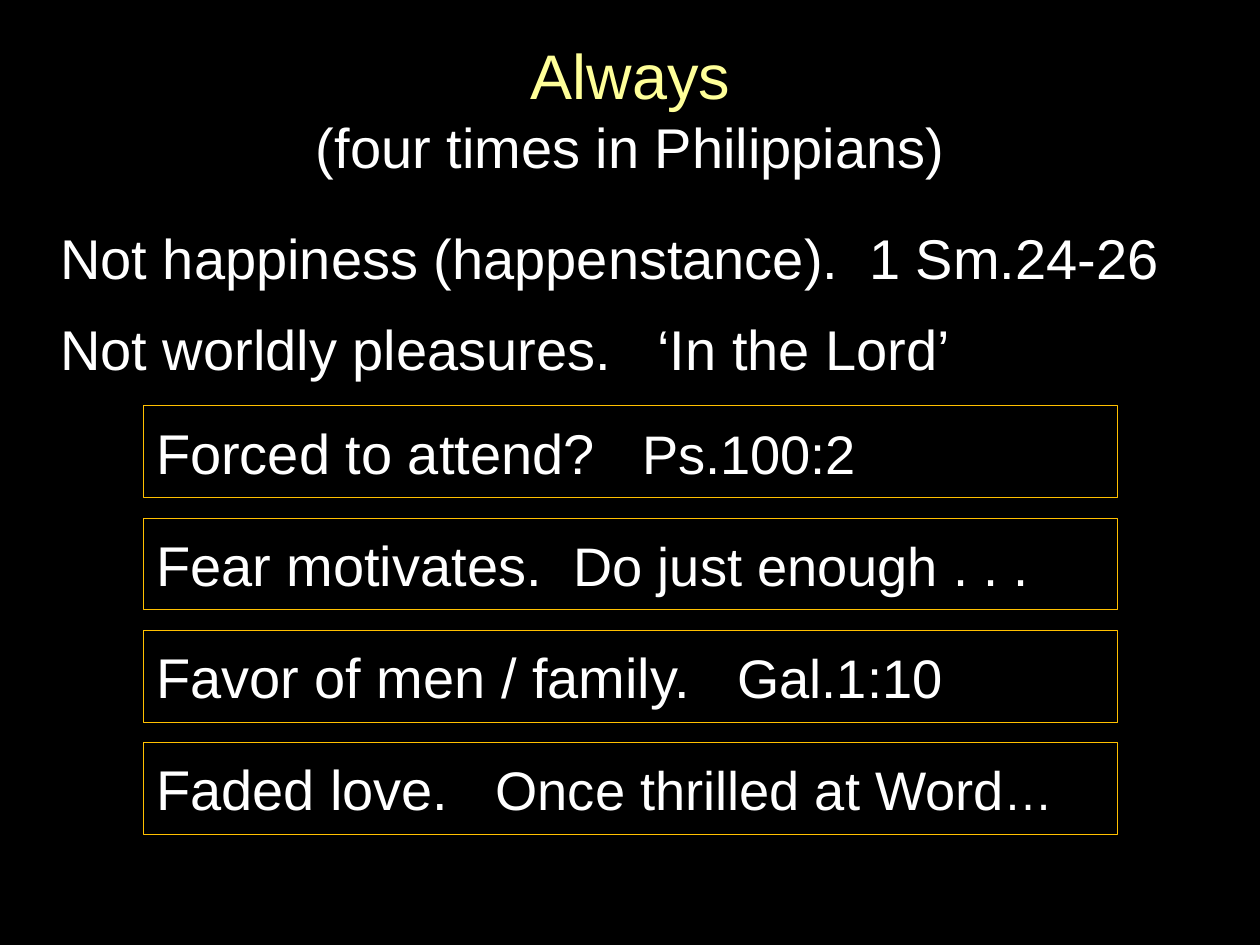
from dataclasses import dataclass

from pptx import Presentation
from pptx import util as u
from pptx.dml import color
from pptx.enum import shapes, text


@dataclass(frozen=True)
class Theme:
    """Colours, font and type sizes of the deck."""
    back: str = "000000"
    ink: str = "FFFFFF"
    head: str = "FFFF99"
    edge: str = "FFC000"
    font: str = "Arial"
    big: int = 36
    main: int = 32
    note: int = 31
    dots: int = 28


def rgb(code):
    return color.RGBColor.from_string(code)


def write(para, words, size, ink, font):
    run = para.add_run()
    run.text = words
    run.font.size = u.Pt(size)
    run.font.name = font
    run.font.color.rgb = rgb(ink)


class Page:
    """Holds the theme and the current slide."""

    def __init__(self, deck, theme):
        self.theme = theme
        self.slide = deck.slides.add_slide(deck.slide_layouts[5])
        fill = self.slide.background.fill
        fill.solid()
        fill.fore_color.rgb = rgb(theme.back)

    def put(self, para, words, size=None, ink=None):
        look = self.theme
        write(para, words, size=size or look.main, ink=ink or look.ink, font=look.font)

    def title(self, head, sub, left, top, width, height):
        shape = self.slide.shapes.title
        shape.left, shape.top = u.Inches(left), u.Inches(top)
        shape.width, shape.height = u.Inches(width), u.Inches(height)
        frame = shape.text_frame
        frame.word_wrap = True
        frame.vertical_anchor = text.MSO_ANCHOR.MIDDLE
        para = frame.paragraphs[0]
        para.alignment = text.PP_ALIGN.CENTER
        self.put(para, head, size=self.theme.big, ink=self.theme.head)
        para.add_line_break()
        self.put(para, sub)

    def body(self, lines, left, top, width, height):
        box = self.slide.shapes.add_textbox(*map(u.Inches, (left, top, width, height)))
        frame = box.text_frame
        frame.word_wrap = True
        frame.margin_top = u.Inches(0.09)
        for i, line in enumerate(lines):
            para = frame.add_paragraph() if i else frame.paragraphs[0]
            para.space_before = u.Pt(8 if i else 0)
            para.space_after = u.Pt(6)
            self.put(para, line)

    def card(self, parts, left, top, width, height):
        box = self.slide.shapes.add_shape(
            shapes.MSO_SHAPE.RECTANGLE, *map(u.Inches, (left, top, width, height)))
        box.shadow.inherit = False
        box.fill.solid()
        box.fill.fore_color.rgb = rgb(self.theme.back)
        box.line.color.rgb = rgb(self.theme.edge)
        box.line.width = u.Pt(0.25)
        frame = box.text_frame
        frame.word_wrap = True
        frame.vertical_anchor = text.MSO_ANCHOR.MIDDLE
        para = frame.paragraphs[0]
        para.alignment = text.PP_ALIGN.LEFT
        for words, size in parts:
            self.put(para, words, size=size)


def main():
    deck = Presentation()
    deck.slide_width, deck.slide_height = u.Inches(10), u.Inches(7.5)
    look = Theme()
    page = Page(deck, look)
    page.title("Always", "(four times in Philippians)", 0.38, 0.15, 9.25, 1.42)
    page.body(["Not happiness (happenstance).  1 Sm.24-26",
               "Not worldly pleasures.   ‘In the Lord’"], 0.38, 1.68, 9.25, 1.45)
    cards = [
        [("Forced to attend?   ", look.main), ("Ps.100:2", look.note)],
        [("Fear motivates.  ", look.main), ("Do just enough . . .", look.note)],
        [("Favor of men / family.   ", look.main), ("Gal.1:10", look.note)],
        [("Faded love.   ", look.main), ("Once thrilled at Word", look.note),
         ("…", look.dots)],
    ]
    for i, parts in enumerate(cards):
        page.card(parts, 1.14, 3.22 + 0.89 * i, 7.73, 0.73)
    deck.save("out.pptx")


if __name__ == "__main__":
    main()
